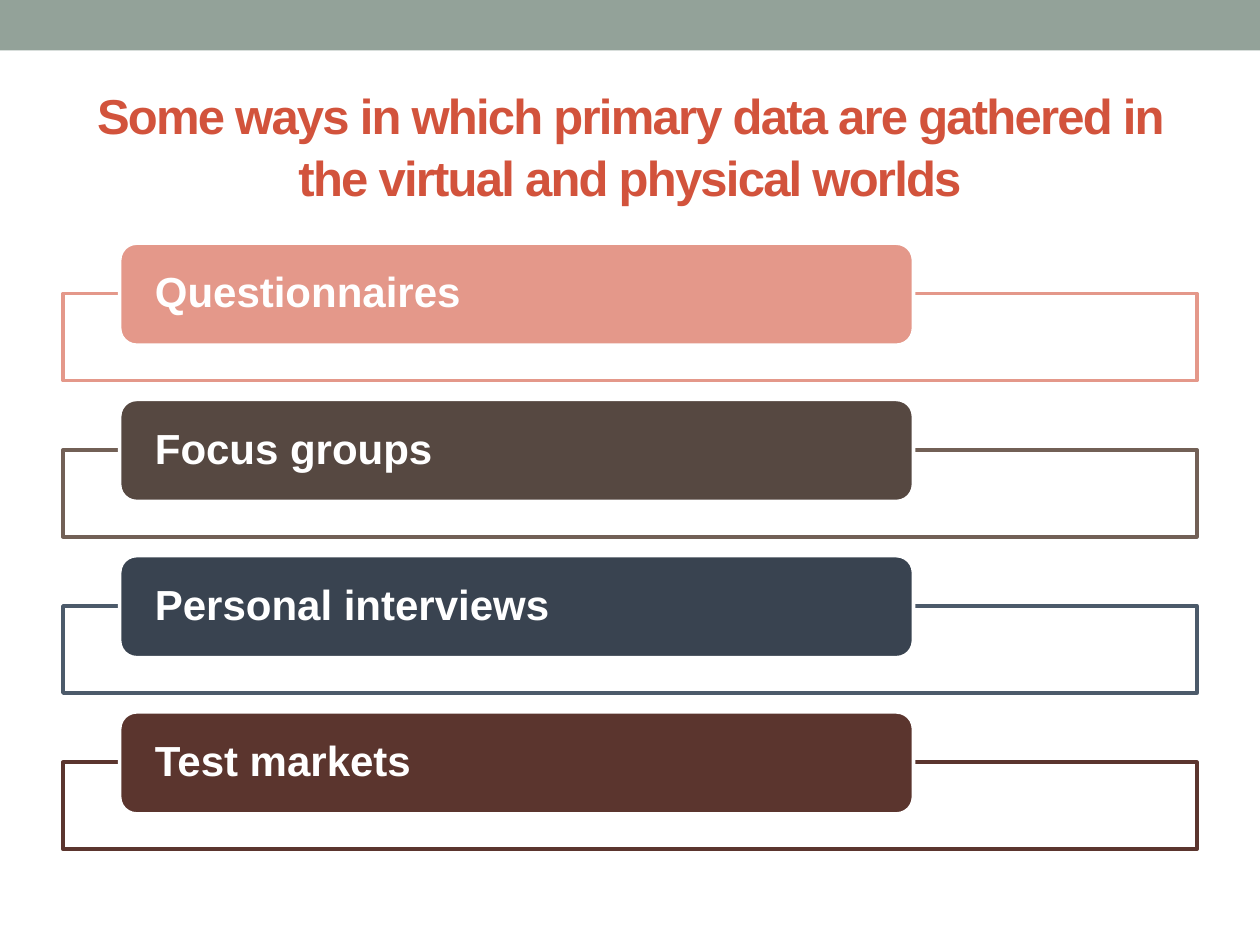
"""Build a slide listing four ways of gathering primary data."""
from lxml.etree import SubElement
from pptx import Presentation
from pptx.dml.color import RGBColor
from pptx.enum.shapes import MSO_SHAPE as SHAPE
from pptx.enum.text import MSO_ANCHOR as ANCHOR, MSO_AUTO_SIZE as FIT, PP_ALIGN as ALIGN
from pptx.oxml.ns import qn
from pptx.util import Inches, Pt


def rgb(code):
    return RGBColor.from_string(code)


def add_box(kind, left, top, width, height, fill, line):
    sp = s.shapes.add_shape(kind, *map(Inches, (left, top, width, height)))
    sp.shadow.inherit = False
    sp.fill.solid()
    sp.fill.fore_color.rgb = rgb(fill)
    sp.line.color.rgb = rgb(line)
    sp.line.width = Pt(2.08)
    return sp


prs = Presentation()
prs.slide_width, prs.slide_height = Inches(10), Inches(7.5)
s = prs.slides.add_slide(prs.slide_layouts[5])

band = add_box(SHAPE.RECTANGLE, 0, 0, 10, 0.4, "93A299", "93A299")
band.line.fill.background()

title = s.shapes.title
title_box = {"left": 0.5, "top": 0.67, "width": 9, "height": 0.95}
for name, value in title_box.items():
    setattr(title, name, Inches(value))
tf = title.text_frame
tf.text = "Some ways in which primary data are gathered in the virtual and physical worlds"
tf.auto_size = FIT.NONE
tf.vertical_anchor = ANCHOR.MIDDLE
p = tf.paragraphs[0]
p.alignment = ALIGN.CENTER
p.line_spacing = 1.05
r = p.runs[0]
for name, value in {"name": "Arial", "size": Pt(28), "bold": True}.items():
    setattr(r.font, name, value)
r.font.color.rgb = rgb("D2533C")
r.font._element.set("spc", "-100")

methods = [
    ("Questionnaires", "E4988A", "E4988A"),
    ("Focus groups", "564841", "726056"),
    ("Personal interviews", "394350", "4C5A6A"),
    ("Test markets", "5B352E", "5B352E"),
]
label_frame = {
    "margin_left": Inches(0.24),
    "margin_right": Inches(0.24),
    "margin_top": 0,
    "margin_bottom": 0,
    "word_wrap": True,
    "vertical_anchor": ANCHOR.MIDDLE,
}
label_font = {"name": "Arial", "size": Pt(24), "bold": True}

for i, (text, fill, line) in enumerate(methods):
    top = 1.93 + 1.24 * i
    frame = add_box(SHAPE.RECTANGLE, 0.5, top + 0.4, 9, 0.69, "FFFFFF", line)
    white = frame.fill._xPr.find(qn("a:solidFill"))[0]
    SubElement(white, qn("a:alpha"), val="90000")

    label = add_box(SHAPE.ROUNDED_RECTANGLE, 0.95, top, 6.3, 0.81, fill, "FFFFFF")
    tf = label.text_frame
    for name, value in label_frame.items():
        setattr(tf, name, value)
    p = tf.paragraphs[0]
    p.alignment = ALIGN.LEFT
    p.line_spacing = 0.9
    r = p.add_run()
    r.text = text
    for name, value in label_font.items():
        setattr(r.font, name, value)
    r.font.color.rgb = rgb("FFFFFF")

prs.save("out.pptx")
